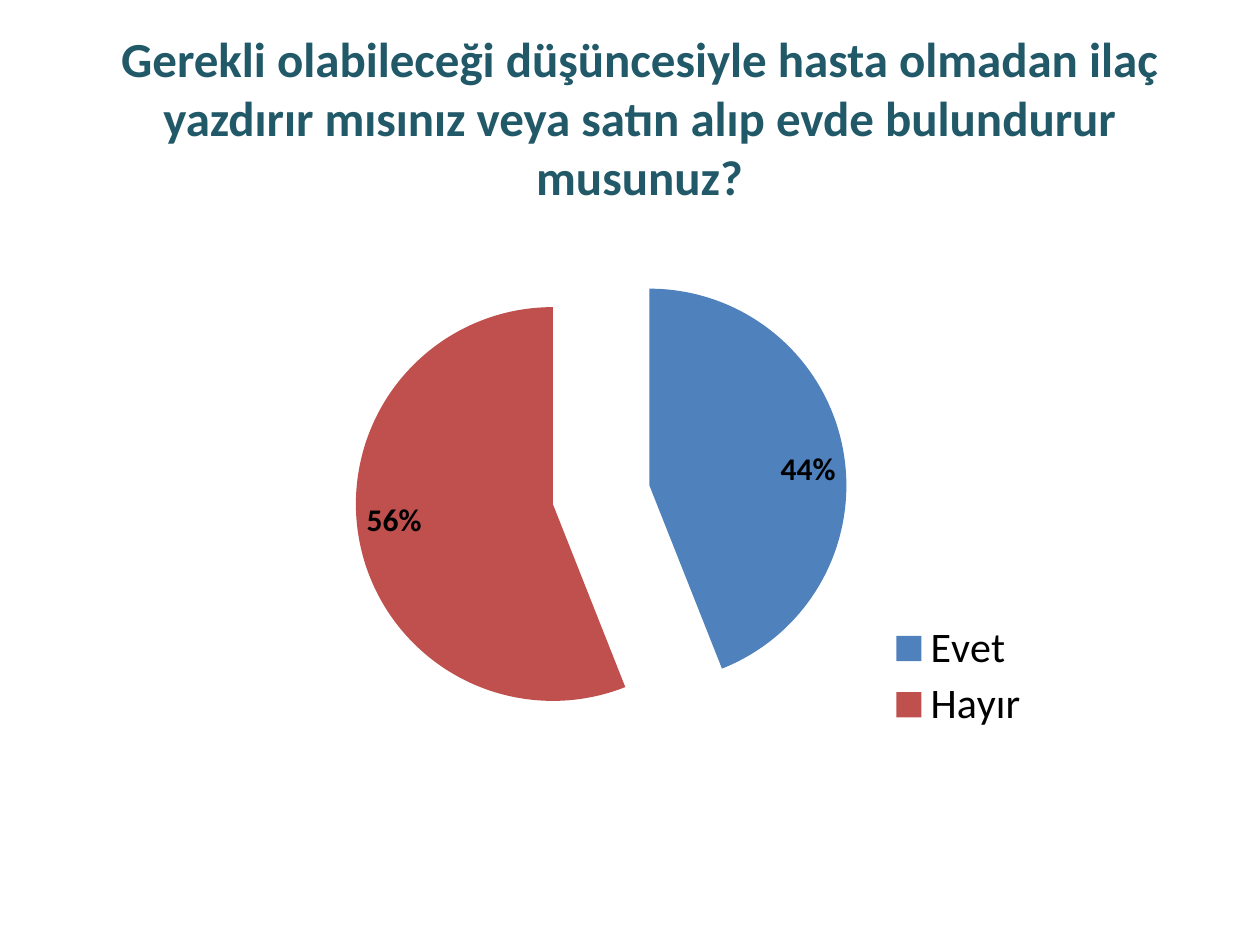
from dataclasses import dataclass

from lxml.etree import SubElement
from pptx import Presentation
from pptx.chart.chart import Chart
from pptx.chart.data import CategoryChartData
from pptx.dml.color import RGBColor
from pptx.enum.chart import XL_CHART_TYPE as ChartType
from pptx.enum.chart import XL_LABEL_POSITION as LabelPosition
from pptx.enum.chart import XL_LEGEND_POSITION as LegendPosition
from pptx.enum.text import MSO_ANCHOR as Anchor
from pptx.enum.text import MSO_AUTO_SIZE as AutoSize
from pptx.enum.text import PP_ALIGN as Align
from pptx.oxml.ns import qn
from pptx.util import Inches, Pt

FONT = "Calibri"
COLORS = {"title": "215968", "text": "000000", "yes": "4F81BD", "no": "C0504D"}
QUESTION = (
    "Gerekli olabileceği düşüncesiyle hasta olmadan ilaç yazdırır mısınız "
    "veya satın alıp evde bulundurur musunuz?"
)


@dataclass(frozen=True)
class Answer:
    label: str
    share: float
    color: str


@dataclass(frozen=True)
class Area:
    left: float
    top: float
    width: float
    height: float

    def inches(self) -> tuple:
        return tuple(map(Inches, (self.left, self.top, self.width, self.height)))


ANSWERS = (Answer("Evet", 0.44, "yes"), Answer("Hayır", 0.56, "no"))
TITLE_AREA = Area(0.5, 0.3, 9.15, 1.72)
CHART_AREA = Area(1.67, 1.53, 6.67, 4.44)
PLOT_SHARE = Area(0.08, 0.1, 0.77, 0.88)
LEGEND_SHARE = Area(0.79, 0.76, 0.2, 0.21)


def rgb(name: str) -> RGBColor:
    return RGBColor.from_string(COLORS[name])


def set_font(font, size: int, color: str, bold: bool) -> None:
    font.name = FONT
    font.size = Pt(size)
    font.bold = bold
    font.color.rgb = rgb(color)


def place_part(part, position: int, share: Area, inner: bool = False) -> None:
    for old in part.findall(qn("c:layout")):
        part.remove(old)
    layout = SubElement(part, qn("c:layout"))
    part.insert(position, layout)
    manual = SubElement(layout, qn("c:manualLayout"))
    settings = {"layoutTarget": "inner"} if inner else {}
    settings |= {"xMode": "edge", "yMode": "edge", "x": share.left,
                 "y": share.top, "w": share.width, "h": share.height}
    for tag, value in settings.items():
        SubElement(manual, qn(f"c:{tag}")).set("val", str(value))


def explode(series, percent: int) -> None:
    explosion = SubElement(series._element, qn("c:explosion"))
    explosion.set("val", str(percent))
    series._element.find(qn("c:tx")).addnext(explosion)


def add_title(page) -> None:
    title = page.shapes.title
    title.left, title.top, title.width, title.height = TITLE_AREA.inches()
    frame = title.text_frame
    frame.word_wrap = True
    frame.auto_size = AutoSize.NONE
    frame.vertical_anchor = Anchor.MIDDLE
    frame.margin_top = 0
    frame.margin_bottom = Inches(0.46)
    para = frame.paragraphs[0]
    para.text = QUESTION
    para.alignment = Align.CENTER
    set_font(para.font, 28, "title", True)


def add_pie(page) -> Chart:
    data = CategoryChartData(number_format="0%")
    data.categories = [answer.label for answer in ANSWERS]
    data.add_series("Series 1", [answer.share for answer in ANSWERS])
    chart = page.shapes.add_chart(ChartType.PIE, *CHART_AREA.inches(), data).chart
    chart.has_title = False
    set_font(chart.font, 18, "text", False)
    plot = chart.plots[0]
    plot.vary_by_categories = True
    series = plot.series[0]
    for index, answer in enumerate(ANSWERS):
        fill = series.points[index].format.fill
        fill.solid()
        fill.fore_color.rgb = rgb(answer.color)
    explode(series, 25)
    labels = series.data_labels
    labels.show_value = True
    labels.number_format = "0%"
    labels.number_format_is_linked = False
    labels.position = LabelPosition.INSIDE_END
    set_font(labels.font, 18, "text", True)
    return chart


def arrange_chart(chart: Chart) -> None:
    chart.has_legend = True
    legend = chart.legend
    legend.position = LegendPosition.RIGHT
    legend.include_in_layout = False
    set_font(legend.font, 24, "text", False)
    place_part(legend._element, 1, LEGEND_SHARE)
    place_part(chart._chartSpace.chart.plotArea, 0, PLOT_SHARE, inner=True)


def main() -> None:
    deck = Presentation()
    deck.slide_width, deck.slide_height = Inches(10), Inches(7.5)
    page = deck.slides.add_slide(deck.slide_layouts[5])
    add_title(page)
    arrange_chart(add_pie(page))
    deck.save("out.pptx")


if __name__ == "__main__":
    main()
